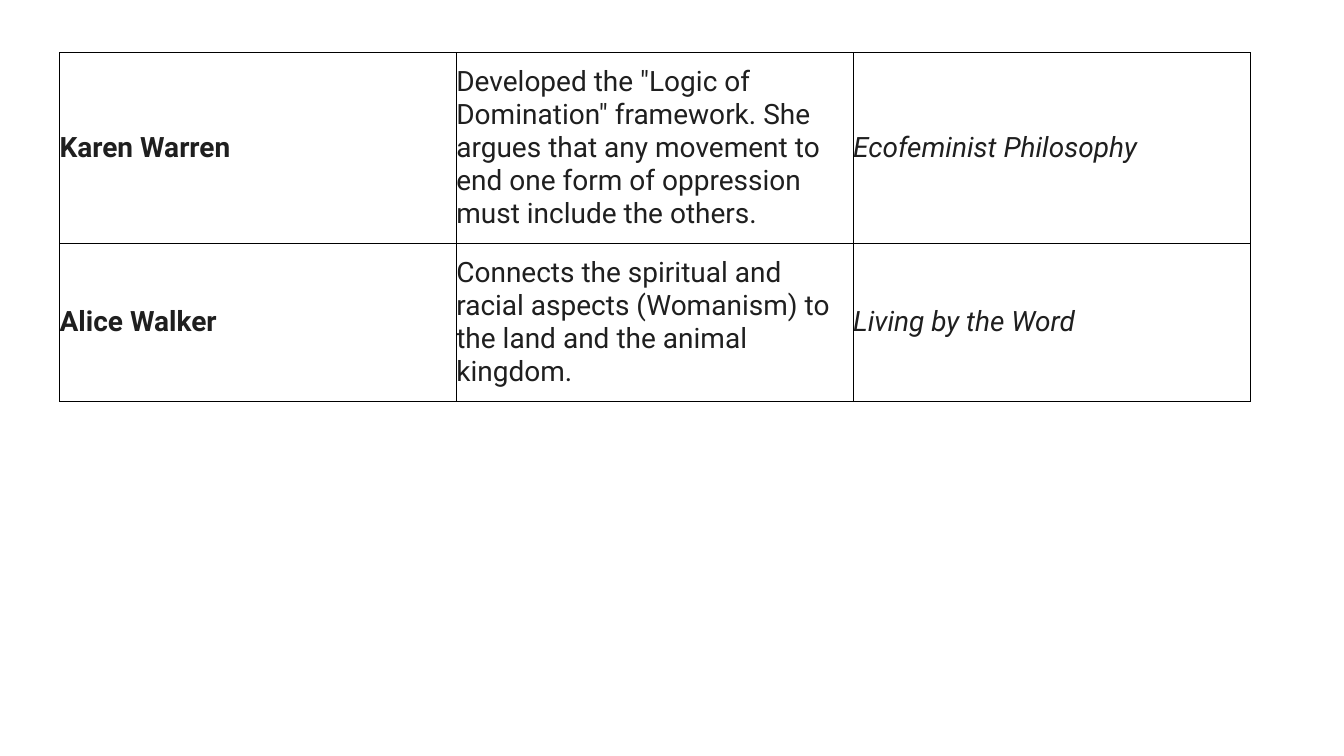
from dataclasses import dataclass

from lxml.etree import SubElement
from pptx import Presentation
from pptx.dml.color import RGBColor
from pptx.enum.text import MSO_ANCHOR
from pptx.oxml.ns import qn
from pptx.table import _Cell
from pptx.util import Cm, Pt

INK = RGBColor(0x1F, 0x1F, 0x1F)
BLACK = RGBColor(0, 0, 0)
FONT = "Roboto"
WIDTH = Cm(10)
PAD = Cm(0.33)


@dataclass(frozen=True)
class Thinker:
    name: str
    idea: str
    work: str
    height: float


THINKERS = [
    Thinker(
        "Karen Warren",
        'Developed the "Logic of Domination" framework. She argues that any '
        "movement to end one form of oppression must include the others.",
        "Ecofeminist Philosophy",
        4.2,
    ),
    Thinker(
        "Alice Walker",
        "Connects the spiritual and racial aspects (Womanism) to the land "
        "and the animal kingdom.",
        "Living by the Word",
        3.43,
    ),
]


def add_border(cell: _Cell) -> None:
    props = cell._tc.get_or_add_tcPr()
    for side in ("lnL", "lnR", "lnT", "lnB"):
        line = SubElement(props, qn(f"a:{side}"), w=str(Pt(0.6)))
        fill = SubElement(line, qn("a:solidFill"))
        SubElement(fill, qn("a:srgbClr"), val=str(BLACK))


def fill_cell(cell: _Cell, text: str, right: int,
              bold: bool = False, italic: bool = False) -> None:
    add_border(cell)
    cell.fill.background()
    cell.vertical_anchor = MSO_ANCHOR.MIDDLE
    cell.margin_left, cell.margin_right = 0, right
    cell.margin_top = cell.margin_bottom = PAD
    cell.text_frame.text = text
    font = cell.text_frame.paragraphs[0].runs[0].font
    font.name, font.size = FONT, Pt(20)
    font.bold, font.italic = bold, italic
    font.color.rgb = INK


def main() -> None:
    deck = Presentation()
    deck.slide_width, deck.slide_height = Cm(33.87), Cm(19.05)
    slide = deck.slides.add_slide(deck.slide_layouts[6])
    height = Cm(sum(thinker.height for thinker in THINKERS))
    table = slide.shapes.add_table(
        len(THINKERS), 3, Cm(1.5), Cm(1.32), 3 * WIDTH, height).table
    table.first_row = table.horz_banding = False
    for column in table.columns:
        column.width = WIDTH
    for row, thinker in zip(table.rows, THINKERS):
        row.height = Cm(thinker.height)
        name, idea, work = row.cells
        fill_cell(name, thinker.name, Cm(0.25), bold=True)
        fill_cell(idea, thinker.idea, Cm(0.25))
        fill_cell(work, thinker.work, 0, italic=True)
    deck.save("out.pptx")


if __name__ == "__main__":
    main()
